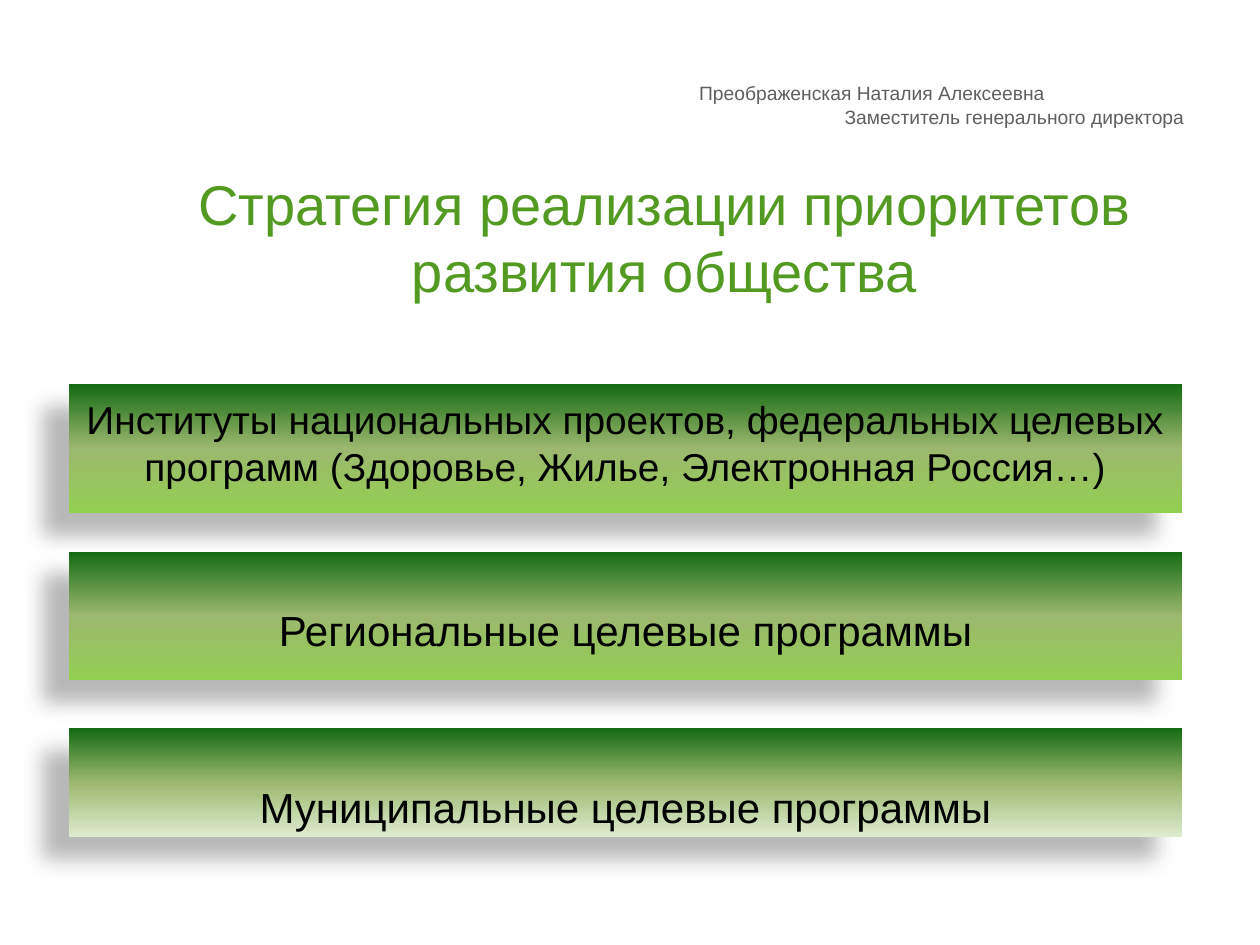
from lxml.etree import SubElement
from pptx import Presentation
from pptx.dml.color import RGBColor
from pptx.enum.shapes import MSO_SHAPE
from pptx.enum.text import MSO_ANCHOR, PP_ALIGN
from pptx.oxml.ns import qn
from pptx.util import Inches, Pt

GREEN_STOPS = ("92D050", "9CB86E", "156B13")
PALE_STOPS = ("DDEBCF", "9CB86E", "156B13")
BARS = [
    # top, height, text, size, top margin, gradient
    (3.05, 1.02, "Институты национальных проектов, федеральных целевых "
     "программ (Здоровье, Жилье, Электронная Россия…)", 22.2, 0.09, GREEN_STOPS),
    (4.38, 1.02, "Региональные целевые программы", 24, 0.42, GREEN_STOPS),
    (5.78, 0.86, "Муниципальные целевые программы", 24, 0.42, PALE_STOPS),
]


def rgb(value):
    return RGBColor.from_string(value)


def write(p, text, size, color="000000", align=PP_ALIGN.CENTER):
    p.alignment = align
    r = p.add_run()
    r.text = text
    r.font.name = "Arial"
    r.font.size = Pt(size)
    r.font.color.rgb = rgb(color)


def add_box(slide, left, top, width, height):
    s = slide.shapes.add_textbox(Inches(left), Inches(top),
                                 Inches(width), Inches(height))
    s.text_frame.word_wrap = True
    return s.text_frame


def fill_upward(s, colors):
    """Fill with evenly spaced gradient stops running from bottom to top."""
    s.fill.gradient()
    s.fill.gradient_angle = 90
    stops = s._element.spPr.find(qn("a:gradFill")).find(qn("a:gsLst"))
    for stop in list(stops):
        stops.remove(stop)
    for i, color in enumerate(colors):
        stop = SubElement(stops, qn("a:gs"),
                          pos=str(100000 * i // (len(colors) - 1)))
        SubElement(stop, qn("a:srgbClr"), val=color)


def add_shadow(s):
    s.shadow.inherit = False
    effects = s._element.spPr.find(qn("a:effectLst"))
    shadow = SubElement(effects, qn("a:outerShdw"), blurRad=str(Pt(11.8)),
                        dist=str(Pt(19.7)), dir=str(141 * 60000),
                        algn="ctr", rotWithShape="0")
    color = SubElement(shadow, qn("a:srgbClr"), val="000000")
    SubElement(color, qn("a:alpha"), val="28000")


def add_bar(slide, left, top, width, height, text, size, margin, colors):
    s = slide.shapes.add_shape(MSO_SHAPE.RECTANGLE, Inches(left), Inches(top),
                               Inches(width), Inches(height))
    fill_upward(s, colors)
    s.line.fill.background()
    add_shadow(s)
    tf = s.text_frame
    tf.word_wrap = True
    tf.vertical_anchor = MSO_ANCHOR.TOP
    tf.margin_top = Inches(margin)
    write(tf.paragraphs[0], text, size)


def add_title(slide, left, top, width, height):
    tf = add_box(slide, left, top, width, height)
    tf.vertical_anchor = MSO_ANCHOR.MIDDLE
    write(tf.paragraphs[0],
          "Стратегия реализации приоритетов развития общества",
          32, color="539A22")


def add_speaker(slide, left, top, width, height):
    tf = add_box(slide, left, top, width, height)
    p = tf.paragraphs[0]
    p._p.get_or_add_pPr().set("marL", str(Inches(0.69)))
    write(p, "Преображенская Наталия Алексеевна", 11,
          color="5F5F5F", align=PP_ALIGN.LEFT)
    write(tf.add_paragraph(), "Заместитель генерального директора", 11,
          color="5F5F5F", align=PP_ALIGN.RIGHT)


def main():
    prs = Presentation()
    prs.slide_width, prs.slide_height = Inches(10), Inches(7.5)
    slide = prs.slides.add_slide(prs.slide_layouts[6])
    for top, height, text, size, margin, colors in BARS:
        add_bar(slide, 0.55, top, 8.83, height, text, size, margin, colors)
    add_title(slide, 0.55, 1.48, 9.45, 0.79)
    add_speaker(slide, 4.76, 0.6, 4.74, 0.47)
    prs.save("out.pptx")


if __name__ == "__main__":
    main()
